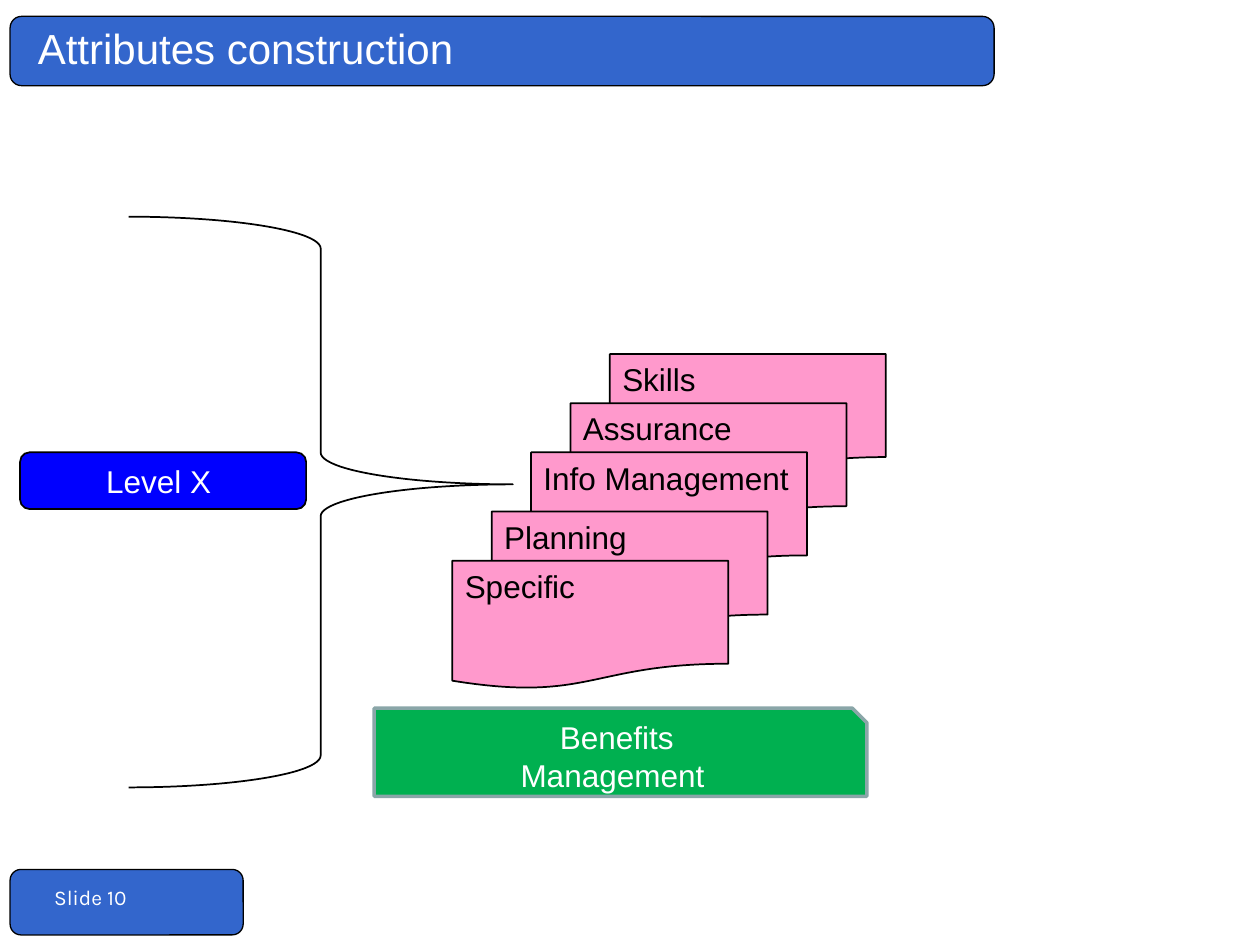
from pptx import Presentation
from pptx.dml.color import RGBColor
from pptx.enum.shapes import MSO_SHAPE
from pptx.enum.text import MSO_ANCHOR, PP_ALIGN
from pptx.util import Inches, Pt

WHITE, BLACK = "FFFFFF", "000000"
BAR_BLUE, LEVEL_BLUE = "3366CC", "0000FF"
PINK, GREEN, GREY = "FF99CC", "00B050", "8AA6A8"

# Stack of cards: each one steps left and down from the one behind it
CARD_LEFT, CARD_TOP = 4.84, 2.81
STEP_LEFT, STEP_DOWN = 0.3125, 0.39
CARD_SIZE = (2.19, 1.02)
FRONT_GAP = 0.08  # extra drop before the two front cards
CARDS = ["Skills", "Assurance", "Info Management", "Planning", "Specific"]


def color(hex_value):
    return RGBColor.from_string(hex_value)


def write(shape, lines, ink=WHITE, size=18, font="Arial",
          align=PP_ALIGN.LEFT, **frame_format):
    frame = shape.text_frame
    settings = {"word_wrap": True, "vertical_anchor": MSO_ANCHOR.MIDDLE,
                **frame_format}
    for name, value in settings.items():
        setattr(frame, name, value)
    frame.text = "\n".join(lines)
    for paragraph in frame.paragraphs:
        paragraph.alignment = align
        for name, value in {"name": font, "size": Pt(size)}.items():
            setattr(paragraph.font, name, value)
        paragraph.font.color.rgb = color(ink)


def add_block(slide, kind, box, fill, line=BLACK, weight=1, adjust=()):
    block = slide.shapes.add_shape(kind, *map(Inches, box))
    block.shadow.inherit = False
    block.fill.solid()
    block.fill.fore_color.rgb = color(fill)
    block.line.color.rgb = color(line)
    block.line.width = Pt(weight)
    for index, value in enumerate(adjust):
        block.adjustments[index] = value
    return block


def add_card(slide, index):
    left = CARD_LEFT - index * STEP_LEFT
    top = CARD_TOP + index * STEP_DOWN + (FRONT_GAP if index > 2 else 0)
    card = add_block(slide, MSO_SHAPE.FLOWCHART_DOCUMENT,
                     (left, top, *CARD_SIZE), PINK)
    write(card, [CARDS[index]], BLACK, vertical_anchor=MSO_ANCHOR.TOP)


def place_title(slide, wording):
    title = slide.shapes.title
    for name, value in zip(("left", "top", "width", "height"),
                           (0.2, 0, 7.62, 0.76)):
        setattr(title, name, Inches(value))
    write(title, [wording], size=24)
    # Bring the title in front of the header bar
    slide.shapes._spTree.append(title._element)


def add_footer(slide, wording):
    footer = slide.shapes.add_textbox(0, Inches(6.9), Inches(1.38), Inches(0.37))
    write(footer, [wording], size=12, font="Karla",
          vertical_anchor=MSO_ANCHOR.BOTTOM, margin_left=Inches(0.43))


def main():
    deck = Presentation()
    deck.slide_width, deck.slide_height = Inches(10), Inches(7.5)
    slide = deck.slides.add_slide(deck.slide_layouts[5])

    # Header and footer bars
    for bar in ((0.08, 0.13, 7.81, 0.55), (0.08, 6.9, 1.85, 0.52)):
        add_block(slide, MSO_SHAPE.ROUNDED_RECTANGLE, bar, BAR_BLUE, weight=0.75)
    add_footer(slide, "Slide 10")

    # Attribute cards behind the brace
    front = len(CARDS) - 1
    for index in range(front):
        add_card(slide, index)
    place_title(slide, "Attributes construction")

    # Benefits base
    benefits = add_block(slide, MSO_SHAPE.SNIP_1_RECTANGLE,
                         (2.97, 5.62, 3.91, 0.7), GREEN, GREY, 2)
    write(benefits, ["Benefits", "Management "], align=PP_ALIGN.CENTER)

    # Level and its brace
    add_block(slide, MSO_SHAPE.RIGHT_BRACE, (1.02, 1.72, 3.05, 4.53), WHITE,
              adjust=(0.083, 0.469))
    level = add_block(slide, MSO_SHAPE.ROUNDED_RECTANGLE,
                      (0.16, 3.59, 2.27, 0.45), LEVEL_BLUE)
    write(level, ["Level X "], align=PP_ALIGN.CENTER)

    # Front card
    add_card(slide, front)
    deck.save("out.pptx")


if __name__ == "__main__":
    main()
